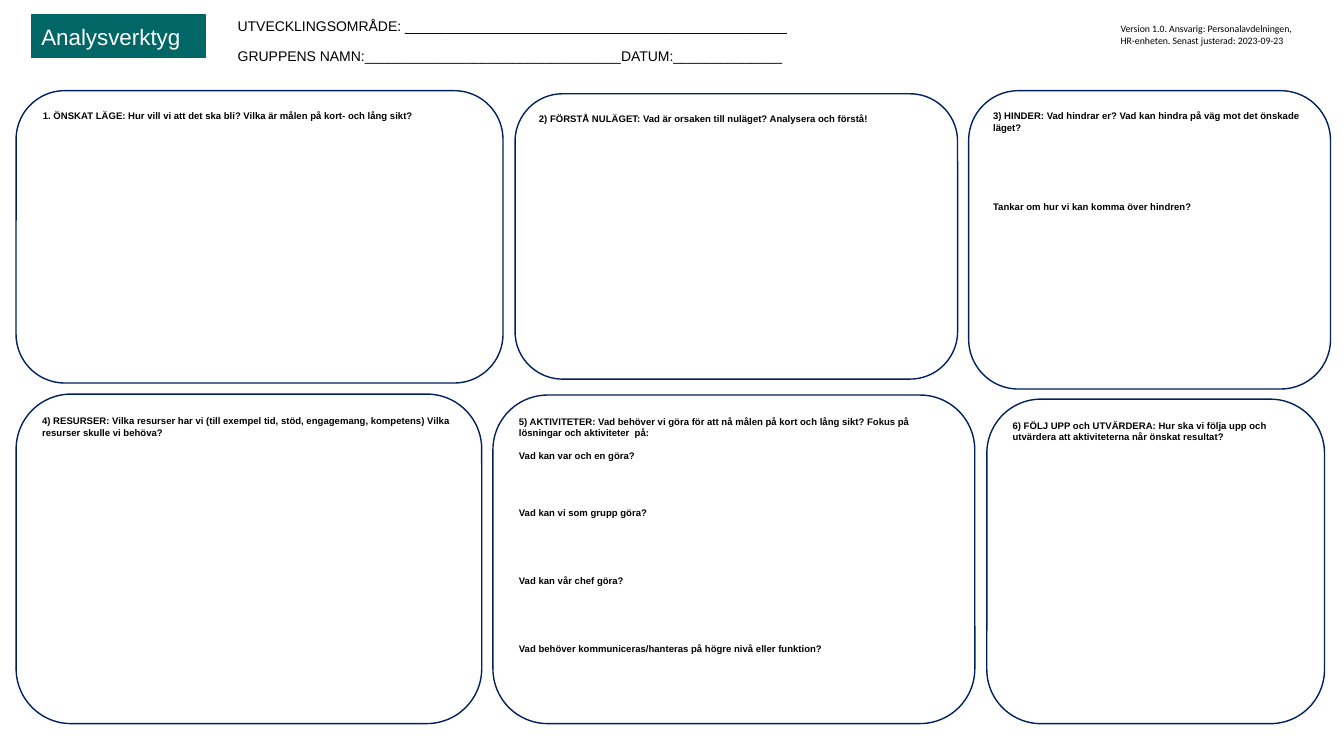
"""Build the one-page Analysverktyg worksheet with six writing panels."""
from dataclasses import dataclass

from lxml.etree import SubElement
from pptx import Presentation
from pptx.dml.color import RGBColor
from pptx.enum.shapes import MSO_SHAPE as Shape
from pptx.enum.text import MSO_ANCHOR as Anchor, MSO_AUTO_SIZE as AutoSize, PP_ALIGN as Align
from pptx.oxml.ns import qn
from pptx.util import Pt


@dataclass(frozen=True)
class Theme:
    teal: RGBColor = RGBColor(0x00, 0x66, 0x66)
    navy: RGBColor = RGBColor(0x00, 0x20, 0x60)
    white: RGBColor = RGBColor(0xFF, 0xFF, 0xFF)
    black: RGBColor = RGBColor(0x00, 0x00, 0x00)
    font: str = "Arial"
    small_font: str = "Calibri"
    title: float = 16
    field: float = 10
    rule: float = 10.7
    version: float = 7
    panel: float = 6.8
    writing_line: float = 8.1


theme = Theme()


def style(span, size, color=theme.black, font=theme.font, bold=False):
    span.font.name = font
    span.font.size = Pt(size)
    span.font.bold = bold
    span.font.color.rgb = color


deck = Presentation()
deck.slide_width, deck.slide_height = Pt(960), Pt(540)
page = deck.slides.add_slide(deck.slide_layouts[5])

title = page.shapes.title
title.left, title.top, title.width, title.height = Pt(22.3), Pt(10.8), Pt(124.6), Pt(30.2)
outline = SubElement(title.element.spPr, qn("a:prstGeom"), prst="roundRect")
SubElement(outline, qn("a:avLst"))
title.fill.solid()
title.fill.fore_color.rgb = theme.teal
title.line.color.rgb = theme.teal
title.line.width = Pt(1)
title.text_frame.text = "Analysverktyg"
title.text_frame.auto_size = AutoSize.NONE
title.text_frame.vertical_anchor = Anchor.MIDDLE
title.text_frame.paragraphs[0].alignment = Align.LEFT
style(title.text_frame.paragraphs[0].runs[0], theme.title, theme.white)

panels = [
    (11.5, 64.8, 347.8, 208.8, [
        (0, " 1. ÖNSKAT LÄGE: Hur vill vi att det ska bli? Vilka är målen på kort- och lång sikt?")]),
    (367.9, 67, 316.1, 203.8, [
        (0, "2) FÖRSTÅ NULÄGET: Vad är orsaken till nuläget? Analysera och förstå!")]),
    (691.9, 64.8, 258.5, 213.1, [
        (0, "3) HINDER: Vad hindrar er? Vad kan hindra på väg mot det önskade läget?"),
        (6, "Tankar om hur vi kan komma över hindren?")]),
    (11.5, 281.5, 332.6, 235.4, [
        (0, "4) RESURSER: Vilka resurser har vi (till exempel tid, stöd, engagemang, kompetens) "
            "Vilka resurser skulle vi behöva?")]),
    (352.1, 282.2, 344.2, 234.7, [
        (0, "5) AKTIVITETER: Vad behöver vi göra för att nå målen på kort och lång sikt? "
            "Fokus på lösningar och aktiviteter  på:"),
        (1, "Vad kan var och en göra?"),
        (4, "Vad kan vi som grupp göra?"),
        (5, "Vad kan vår chef göra?"),
        (5, "Vad behöver kommuniceras/hanteras på högre nivå eller funktion?")]),
    (704.9, 285.1, 241.2, 231.8, [
        (0, "6) FÖLJ UPP och UTVÄRDERA: Hur ska vi följa upp och utvärdera att aktiviteterna "
            "når önskat resultat?")]),
]
for left, top, width, height, prompts in panels:
    panel = page.shapes.add_shape(Shape.ROUNDED_RECTANGLE, Pt(left), Pt(top), Pt(width), Pt(height))
    panel.shadow.inherit = False
    panel.fill.solid()
    panel.fill.fore_color.rgb = theme.white
    panel.line.color.rgb = theme.navy
    panel.line.width = Pt(1)
    frame = panel.text_frame
    frame.vertical_anchor = Anchor.TOP
    frame.text = "\n".join(prompt for _, prompt in prompts)
    for para, (lines_above, _) in zip(frame.paragraphs, prompts):
        para.alignment = Align.LEFT
        if lines_above:
            para.space_before = Pt(lines_above * theme.writing_line)
        style(para.runs[0], theme.panel, bold=True)

fields = [
    (8.6, 408.2, [("UTVECKLINGSOMRÅDE: ", theme.field), ("_" * 46, theme.rule)]),
    (30.2, 411.8, [("GRUPPENS NAMN:" + "_" * 33 + "DATUM:" + "_" * 14, theme.field)]),
]
for top, width, pieces in fields:
    field = page.shapes.add_textbox(Pt(162.7), Pt(top), Pt(width), Pt(19.8))
    field.text_frame.word_wrap = False
    field.text_frame.auto_size = AutoSize.SHAPE_TO_FIT_TEXT
    for words, size in pieces:
        span = field.text_frame.paragraphs[0].add_run()
        span.text = words
        style(span, size)

version = page.shapes.add_textbox(Pt(793.4), Pt(13), Pt(166), Pt(28.1))
version.fill.solid()
version.fill.fore_color.rgb = theme.white
version.text_frame.word_wrap = True
version.text_frame.text = (
    "Version 1.0. Ansvarig: Personalavdelningen,\nHR-enheten. Senast justerad: 2023-09-23")
for para in version.text_frame.paragraphs:
    style(para.runs[0], theme.version, font=theme.small_font)

deck.save("out.pptx")
